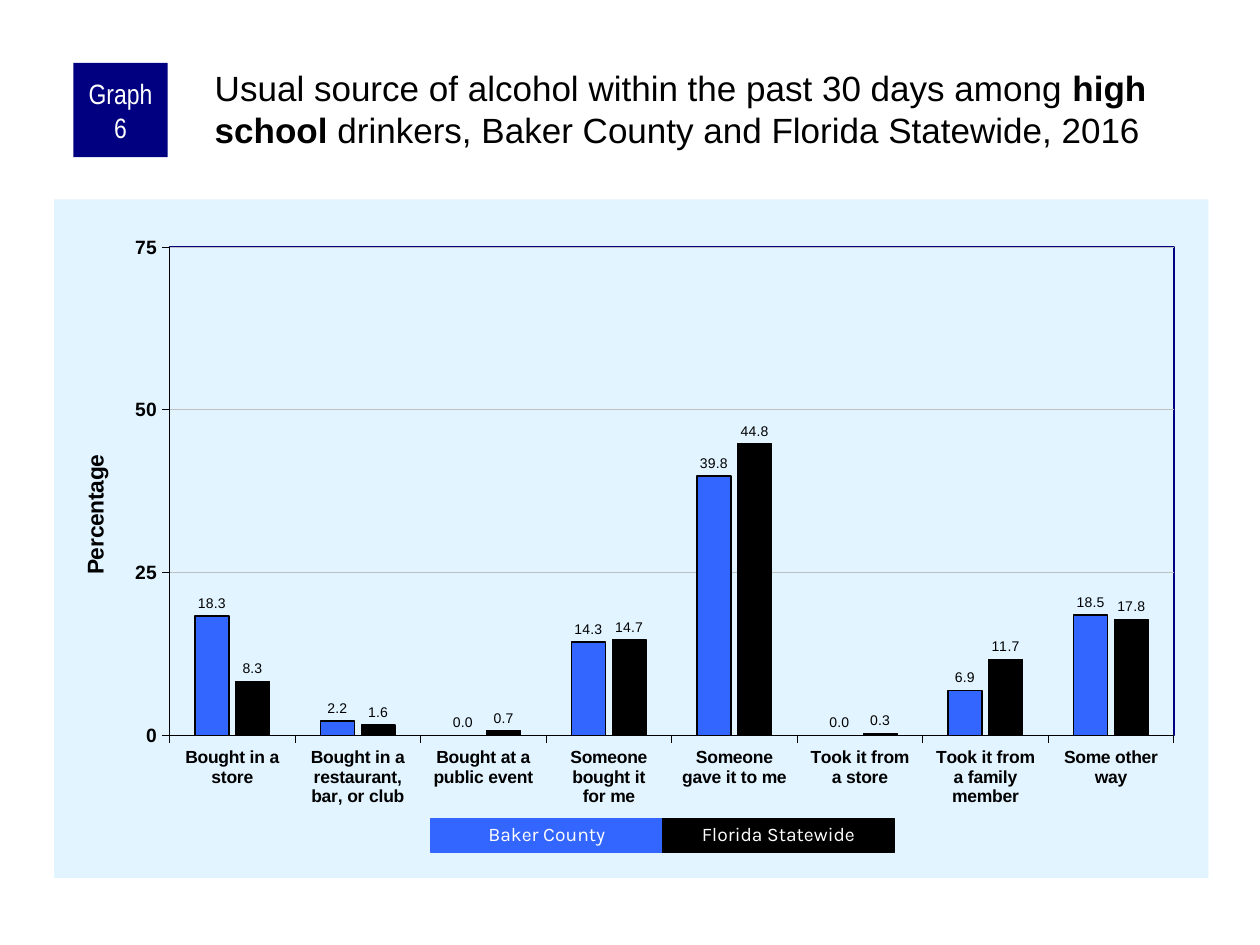
from lxml import etree
from pptx import Presentation
from pptx.chart.data import CategoryChartData
from pptx.dml.color import RGBColor
from pptx.enum.chart import XL_CHART_TYPE, XL_LABEL_POSITION, XL_TICK_MARK
from pptx.enum.shapes import MSO_SHAPE
from pptx.enum.text import MSO_ANCHOR, PP_ALIGN
from pptx.oxml import parse_xml
from pptx.oxml.ns import nsdecls, qn
from pptx.util import Cm, Pt

BLACK = RGBColor(0x00, 0x00, 0x00)
WHITE = RGBColor(0xFF, 0xFF, 0xFF)
NAVY = RGBColor(0x00, 0x00, 0x80)
BLUE = RGBColor(0x33, 0x66, 0xFF)
PALE_BLUE = RGBColor(0xE1, 0xF4, 0xFF)
GREY = RGBColor(0xC0, 0xC0, 0xC0)

TITLE = [
    ("Usual source of alcohol within the past 30 days among ", False),
    ("high school", True),
    (" drinkers, Baker County and Florida Statewide, 2016", False),
]
SOURCES = [
    ("Bought in a store", 18.3, 8.3),
    ("Bought in a restaurant, bar, or club", 2.2, 1.6),
    ("Bought at a public event", 0, 0.7),
    ("Someone bought it\nfor me", 14.3, 14.7),
    ("Someone\ngave it to me", 39.8, 44.8),
    ("Took it from\na store", 0, 0.3),
    ("Took it from\na family member", 6.9, 11.7),
    ("Some other way", 18.5, 17.8),
]
AREAS = [("Baker County", BLUE, 1), ("Florida Statewide", BLACK, 0.75)]
KEY_LEFT, KEY_TOP, KEY_WIDTH, KEY_HEIGHT = 8.69, 16.5, 4.67, 0.69


def style_font(font, size, color=BLACK, bold=False, name="Arial"):
    font.size, font.bold, font.name = Pt(size), bold, name
    font.color.rgb = color


def write(frame, runs, size, color=BLACK, name="Arial",
          align=PP_ALIGN.LEFT, spacing=None, anchor=MSO_ANCHOR.TOP, insets=None):
    """Fill a text frame with one paragraph of (text, bold) runs."""
    frame.word_wrap = True
    frame.vertical_anchor = anchor
    if insets:
        (frame.margin_left, frame.margin_top,
         frame.margin_right, frame.margin_bottom) = map(Cm, insets)
    para = frame.paragraphs[0]
    para.alignment = align
    if spacing:
        para.line_spacing = spacing
    for text, bold in runs:
        span = para.add_run()
        span.text = text
        style_font(span.font, size, color, bold, name)


def add_block(page, left, top, width, height, color, line_width=None):
    block = page.shapes.add_shape(
        MSO_SHAPE.RECTANGLE, Cm(left), Cm(top), Cm(width), Cm(height))
    block.shadow.inherit = False
    block.fill.solid()
    block.fill.fore_color.rgb = color
    if line_width:
        block.line.color.rgb = color
        block.line.width = Pt(line_width)
    else:
        block.line.fill.background()
    return block


def set_layout(parent, position, **values):
    """Place a chart part by fractions of the chart, at a child position."""
    for old in parent.findall(qn("c:layout")):
        parent.remove(old)
    layout = parse_xml(f"<c:layout {nsdecls('c')}><c:manualLayout/></c:layout>")
    for tag, value in values.items():
        etree.SubElement(layout[0], qn(f"c:{tag}")).set("val", str(value))
    parent.insert(position, layout)


def area_format(fill, line):
    return parse_xml(f"<c:spPr {nsdecls('c', 'a')}>{fill}{line}</c:spPr>")


def style_axis(axis, size):
    axis.major_tick_mark = XL_TICK_MARK.OUTSIDE
    axis.minor_tick_mark = XL_TICK_MARK.NONE
    style_font(axis.tick_labels.font, size, bold=True)
    axis.format.line.color.rgb = BLACK
    axis.format.line.width = Pt(0.25)


def add_source_chart(page):
    data = CategoryChartData(number_format="0.0")
    data.categories = [row[0] for row in SOURCES]
    for column, (area, _, _) in enumerate(AREAS, 1):
        data.add_series(area, [row[column] for row in SOURCES])
    chart = page.shapes.add_chart(
        XL_CHART_TYPE.COLUMN_CLUSTERED,
        Cm(1.09), Cm(4.02), Cm(23.27), Cm(13.68), data).chart
    chart.has_legend = False
    chart.has_title = False
    style_font(chart.font, 11.5)

    plot = chart.plots[0]
    plot.gap_width, plot.overlap = 150, -20
    plot.vary_by_categories = False
    for series, (_, color, line_width) in zip(plot.series, AREAS):
        series.format.fill.solid()
        series.format.fill.fore_color.rgb = color
        series.format.line.color.rgb = BLACK
        series.format.line.width = Pt(line_width)
        labels = series.data_labels
        labels.show_value = True
        labels.position = XL_LABEL_POSITION.OUTSIDE_END
        labels.number_format = "0.0"
        labels.number_format_is_linked = False
        style_font(labels.font, 8)

    style_axis(chart.category_axis, 10)
    percent = chart.value_axis
    style_axis(percent, 11)
    percent.minimum_scale, percent.maximum_scale, percent.major_unit = 0, 75, 25
    percent.tick_labels.number_format = "0"
    percent.tick_labels.number_format_is_linked = False
    percent.major_gridlines.format.line.color.rgb = GREY
    percent.major_gridlines.format.line.width = Pt(0.25)
    write(percent.axis_title.text_frame, [("Percentage", True)], 13,
          align=PP_ALIGN.CENTER)
    title = percent.axis_title._element
    title.find(".//" + qn("a:bodyPr")).set("rot", "-5400000")
    set_layout(title, 1, xMode="edge", yMode="edge", x=0.02, y=0.37)

    root = chart._chartSpace
    plot_area = root.find(".//" + qn("c:plotArea"))
    set_layout(plot_area, 0, layoutTarget="inner", xMode="edge", yMode="edge",
               x=0.1, y=0.07, w=0.87, h=0.72)
    solid = '<a:solidFill><a:srgbClr val="{}"/></a:solidFill>'
    plot_area.append(area_format(
        "<a:noFill/>", f'<a:ln w="12700">{solid.format(NAVY)}</a:ln>'))
    root.find(qn("c:chart")).addnext(area_format(
        solid.format(PALE_BLUE), "<a:ln><a:noFill/></a:ln>"))


def main():
    deck = Presentation()
    deck.slide_width, deck.slide_height = Cm(25.4), Cm(19.05)
    page = deck.slides.add_slide(deck.slide_layouts[6])

    add_source_chart(page)
    badge = add_block(page, 1.48, 1.27, 1.9, 1.9, NAVY)
    write(badge.text_frame, [("Graph 6", False)], 16, WHITE, "Arial Narrow",
          PP_ALIGN.CENTER, anchor=MSO_ANCHOR.MIDDLE, insets=(0.13, 0, 0.13, 0))
    heading = page.shapes.add_textbox(Cm(4.25), Cm(1.27), Cm(20.11), Cm(2.11))
    write(heading.text_frame, TITLE, 20, insets=(0.08, 0.08, 0, 0))
    for index, (area, color, _) in enumerate(AREAS):
        key = add_block(page, KEY_LEFT + index * KEY_WIDTH, KEY_TOP,
                        KEY_WIDTH, KEY_HEIGHT, color, 0.75)
        write(key.text_frame, [(area, False)], 11, WHITE, "Karla",
              PP_ALIGN.CENTER, spacing=0.9)

    deck.save("out.pptx")


if __name__ == "__main__":
    main()
